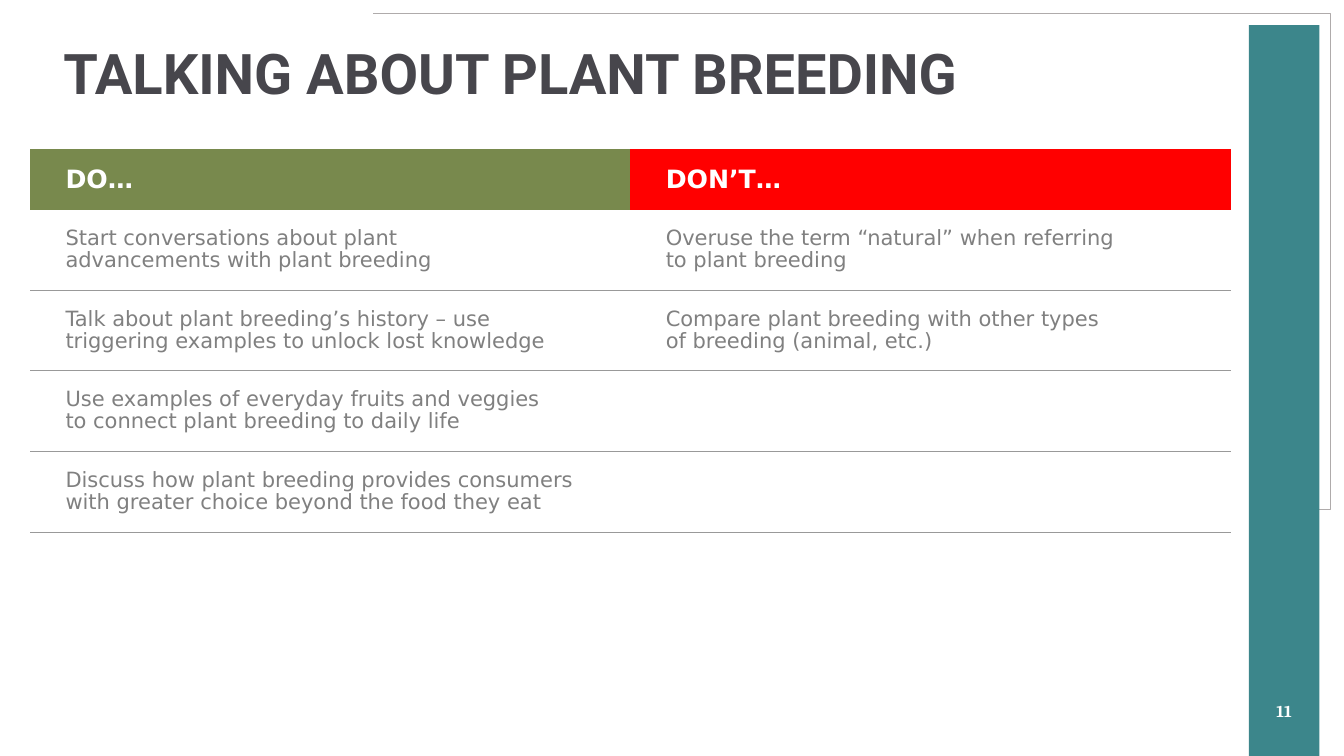
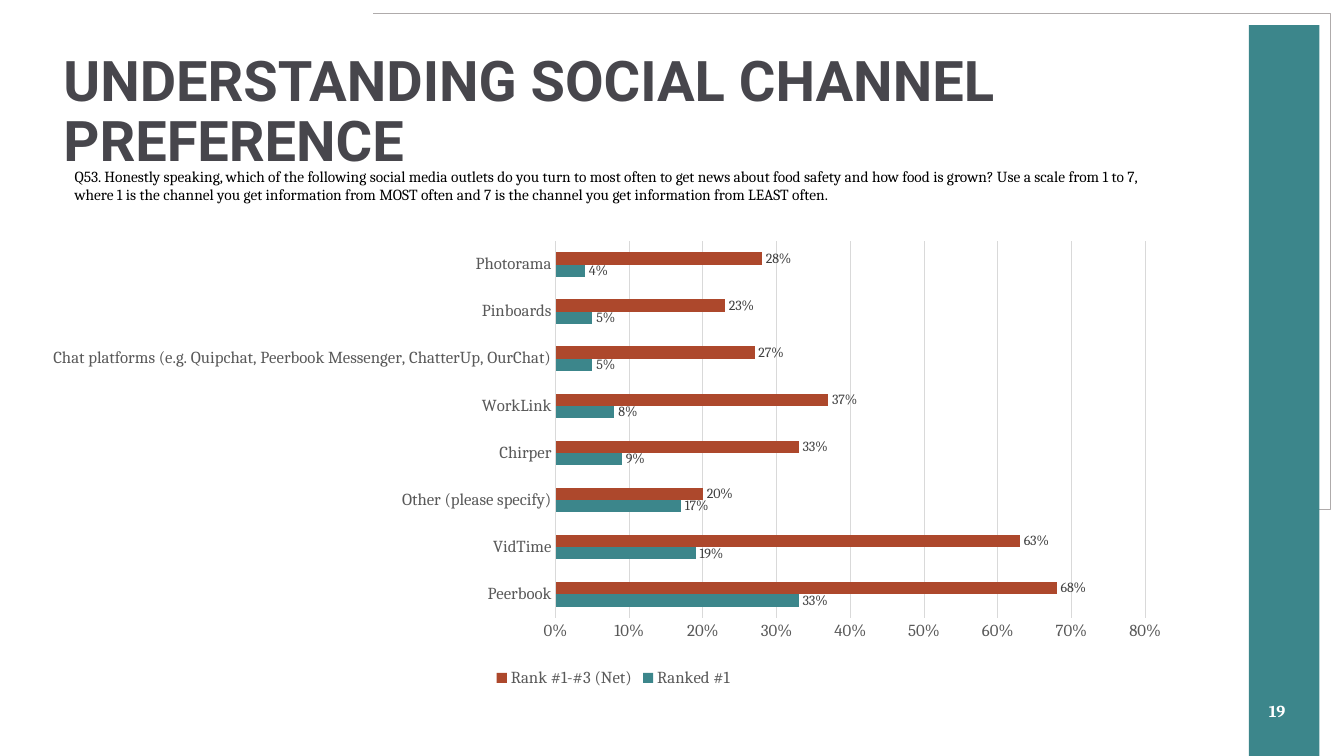
from dataclasses import dataclass

from lxml import etree
from pptx import Presentation
from pptx.chart.data import CategoryChartData
from pptx.dml.color import RGBColor as RGB
from pptx.enum.chart import XL_CHART_TYPE as CHART, XL_LABEL_POSITION as LABEL
from pptx.enum.chart import XL_LEGEND_POSITION as LEGEND, XL_TICK_MARK as TICK
from pptx.enum.shapes import MSO_SHAPE as SHAPE
from pptx.enum.text import MSO_ANCHOR as ANCHOR, MSO_AUTO_SIZE as AUTO, PP_ALIGN as ALIGN
from pptx.oxml import parse_xml
from pptx.oxml.ns import nsdecls, qn
from pptx.util import Inches, Pt


@dataclass(frozen=True)
class Theme:
    teal: RGB = RGB.from_string("3C868B")
    rust: RGB = RGB.from_string("AD482C")
    olive: RGB = RGB.from_string("78894D")
    red: RGB = RGB.from_string("FF0000")
    white: RGB = RGB.from_string("FFFFFF")
    black: RGB = RGB.from_string("000000")
    title: RGB = RGB.from_string("47464C")
    body: RGB = RGB.from_string("808080")
    axis: RGB = RGB.from_string("595959")
    label: RGB = RGB.from_string("404040")
    grid: RGB = RGB.from_string("D9D9D9")
    frame: RGB = RGB.from_string("AFABAB")
    rule: str = "999999"
    head_font: str = "Roboto"
    table_font: str = "DejaVu Sans"
    text_font: str = "Cambria"
    title_size: int = 40
    head_size: int = 18
    body_size: int = 15
    axis_size: int = 12
    note_size: int = 11
    label_size: int = 10


T = Theme()
UNIT = Inches(0.1)  # one column or row of the layout grid
NO_GRID_STYLE = "{2D5ABB26-0587-4C30-8999-92F81FD0307C}"


def box(*cells):
    """Turn grid columns and rows into lengths."""
    return [round(c * UNIT) for c in cells]


def style(font, name, size, color, bold=False):
    font.name, font.size, font.bold = name, Pt(size), bold
    font.color.rgb = color


prs = Presentation()
prs.slide_width, prs.slide_height = box(133.33, 75)
layout = prs.slide_layouts[5]

# Titles and page numbers
pages = [
    ("TALKING ABOUT PLANT BREEDING", 0.3, "11", 125.2, 4.4),
    ("UNDERSTANDING SOCIAL CHANNEL PREFERENCE", 4, "19", 123.8, 5.8),
]
slides = []
for title, top, number, left, width in pages:
    slide = prs.slides.add_slide(layout)
    slides.append(slide)
    sp = slide.shapes.title
    sp.left, sp.top, sp.width, sp.height = box(5.3, top, 116.9, 14.5)
    page_box = slide.shapes.add_textbox(*box(left, 68.6, width, 4))
    for tf, text, align, look in (
        (sp.text_frame, title, ALIGN.LEFT, (T.head_font, T.title_size, T.title, True)),
        (page_box.text_frame, number, ALIGN.CENTER, (T.text_font, T.axis_size, T.white, True)),
    ):
        tf.word_wrap, tf.auto_size = True, AUTO.NONE
        tf.vertical_anchor = ANCHOR.MIDDLE
        p = tf.paragraphs[0]
        p.alignment, p.line_spacing = align, 0.9
        r = p.add_run()
        r.text = text
        style(r.font, *look)

# Corner outline and side band, moved to the layout that both slides share
talking, channels = slides
pen = talking.shapes.build_freeform(*box(129.8, 50.5))
pen.add_line_segments([box(132, 50.5), box(132, 1.3), box(37, 1.3)], close=False)
outline = pen.convert_to_shape()
outline.fill.background()
outline.line.color.rgb, outline.line.width = T.frame, Pt(0.25)
band = talking.shapes.add_shape(SHAPE.RECTANGLE, *box(123.9, 2.5, 7, 72.5))
band.fill.solid()
band.fill.fore_color.rgb = T.teal
band.line.fill.background()
for shape_id, sp in enumerate((outline, band), start=20):
    sp.shadow.inherit = False
    sp.element.xpath("./p:nvSpPr/p:cNvPr")[0].set("id", str(shape_id))
    layout.shapes.element.append(sp.element)

# Do and don't table
advice = [
    ("DO…", "DON’T…"),
    ("Start conversations about plant\nadvancements with plant breeding",
     "Overuse the term “natural” when referring\nto plant breeding"),
    ("Talk about plant breeding’s history – use\ntriggering examples to unlock lost knowledge",
     "Compare plant breeding with other types\nof breeding (animal, etc.)"),
    ("Use examples of everyday fruits and veggies\nto connect plant breeding to daily life", ""),
    ("Discuss how plant breeding provides consumers\nwith greater choice beyond the food they eat", ""),
    ("", ""),
]
advice_table = talking.shapes.add_table(len(advice), 2, *box(3, 14.8, 119.1, 46)).table
question_table = channels.shapes.add_table(1, 1, *box(7.3, 16.6, 108.9, 3.8)).table
for table in (advice_table, question_table):
    table.first_row = table.horz_banding = False
    table._tbl.tblPr.find(qn("a:tableStyleId")).text = NO_GRID_STYLE

for i, texts in enumerate(advice):
    header = i == 0
    advice_table.rows[i].height = round((6 if header else 8) * UNIT)
    for j, text in enumerate(texts):
        cell = advice_table.cell(i, j)
        cell.vertical_anchor = ANCHOR.MIDDLE
        cell.margin_left, cell.margin_right = box(3.5, 1)
        cell.margin_top = cell.margin_bottom = round((0.5 if header else 1) * UNIT)
        if 0 < i < len(advice) - 1:
            cell._tc.get_or_add_tcPr().append(parse_xml(
                f'<a:lnB {nsdecls("a")} w="{Pt(0.75)}"><a:solidFill>'
                f'<a:srgbClr val="{T.rule}"/></a:solidFill></a:lnB>'))
        if header:
            cell.fill.solid()
            cell.fill.fore_color.rgb = (T.olive, T.red)[j]
        else:
            cell.fill.background()
        if not text:
            continue
        p = cell.text_frame.paragraphs[0]
        p.line_spacing = 1.0 if header else 0.9
        for k, line in enumerate(text.split("\n")):
            if k:
                p.add_line_break()
            r = p.add_run()
            r.text = line
            if header:
                style(r.font, T.table_font, T.head_size, T.white, True)
            else:
                style(r.font, T.table_font, T.body_size, T.body)
        for br in p._p.findall(qn("a:br")):
            etree.SubElement(br, qn("a:rPr"), sz=str(T.body_size * 100))

# Survey question
cell = question_table.cell(0, 0)
cell.margin_left = cell.margin_right = cell.margin_top = round(0.1 * UNIT)
cell.margin_bottom = 0
cell.fill.solid()
cell.fill.fore_color.rgb = T.white
r = cell.text_frame.paragraphs[0].add_run()
r.text = (
    "Q53. Honestly speaking, which of the following social media outlets do you turn to most often "
    "to get news about food safety and how food is grown? Use a scale from 1 to 7, where 1 is the "
    "channel you get information from MOST often and 7 is the channel you get information from "
    "LEAST often."
)
style(r.font, T.text_font, T.note_size, T.black)

# Channel ranking chart
ranking = [
    ("Peerbook", 0.33, 0.68),
    ("VidTime", 0.19, 0.63),
    ("Other (please specify)", 0.17, 0.20),
    ("Chirper", 0.09, 0.33),
    ("WorkLink", 0.08, 0.37),
    ("Chat platforms (e.g. Quipchat, Peerbook Messenger, ChatterUp, OurChat)", 0.05, 0.27),
    ("Pinboards", 0.05, 0.23),
    ("Photorama", 0.04, 0.28),
]
names, first, net = zip(*ranking)
data = CategoryChartData(number_format="0%")
data.categories = names
data.add_series("Ranked #1", first)
data.add_series("Rank #1-#3 (Net)", net)
chart = channels.shapes.add_chart(CHART.BAR_CLUSTERED, *box(3.5, 23, 114.7, 45.6), data).chart
style(chart.font, T.text_font, T.label_size, T.black)
chart.has_title = False
chart.has_legend = True
chart.legend.position, chart.legend.include_in_layout = LEGEND.BOTTOM, False
style(chart.legend.font, T.text_font, T.axis_size, T.axis)

plot = chart.plots[0]
plot.gap_width, plot.overlap, plot.vary_by_categories = 182, 0, False
for series, color in zip(plot.series, (T.teal, T.rust)):
    series.format.fill.solid()
    series.format.fill.fore_color.rgb = color
    labels = series.data_labels
    labels.show_value, labels.position = True, LABEL.OUTSIDE_END
    labels.number_format, labels.number_format_is_linked = "0%", False
    style(labels.font, T.text_font, T.label_size, T.label)

for axis in (chart.category_axis, chart.value_axis):
    axis.major_tick_mark = axis.minor_tick_mark = TICK.NONE
    style(axis.tick_labels.font, T.text_font, T.axis_size, T.axis)
chart.category_axis.has_major_gridlines = False
values = chart.value_axis
values.minimum_scale, values.maximum_scale, values.major_unit = 0, 0.8, 0.1
values.tick_labels.number_format, values.tick_labels.number_format_is_linked = "0%", False
values.format.line.fill.background()
values.has_major_gridlines = True
for line in (chart.category_axis.format.line, values.major_gridlines.format.line):
    line.color.rgb, line.width = T.grid, Pt(0.75)

# Fixed plot area, in shares of the chart, leaves room for the long category name
area = chart.element.find(f".//{qn('c:plotArea')}")
for old in area.findall(qn("c:layout")):
    area.remove(old)
modes = '<c:layoutTarget val="inner"/><c:xMode val="edge"/><c:yMode val="edge"/>'
shares = "".join(f'<c:{k} val="{v}"/>' for k, v in zip("xywh", (0.45, 0.02, 0.51, 0.82)))
area.insert(0, parse_xml(
    f'<c:layout {nsdecls("c")}><c:manualLayout>{modes}{shares}</c:manualLayout></c:layout>'))

prs.save("out.pptx")
